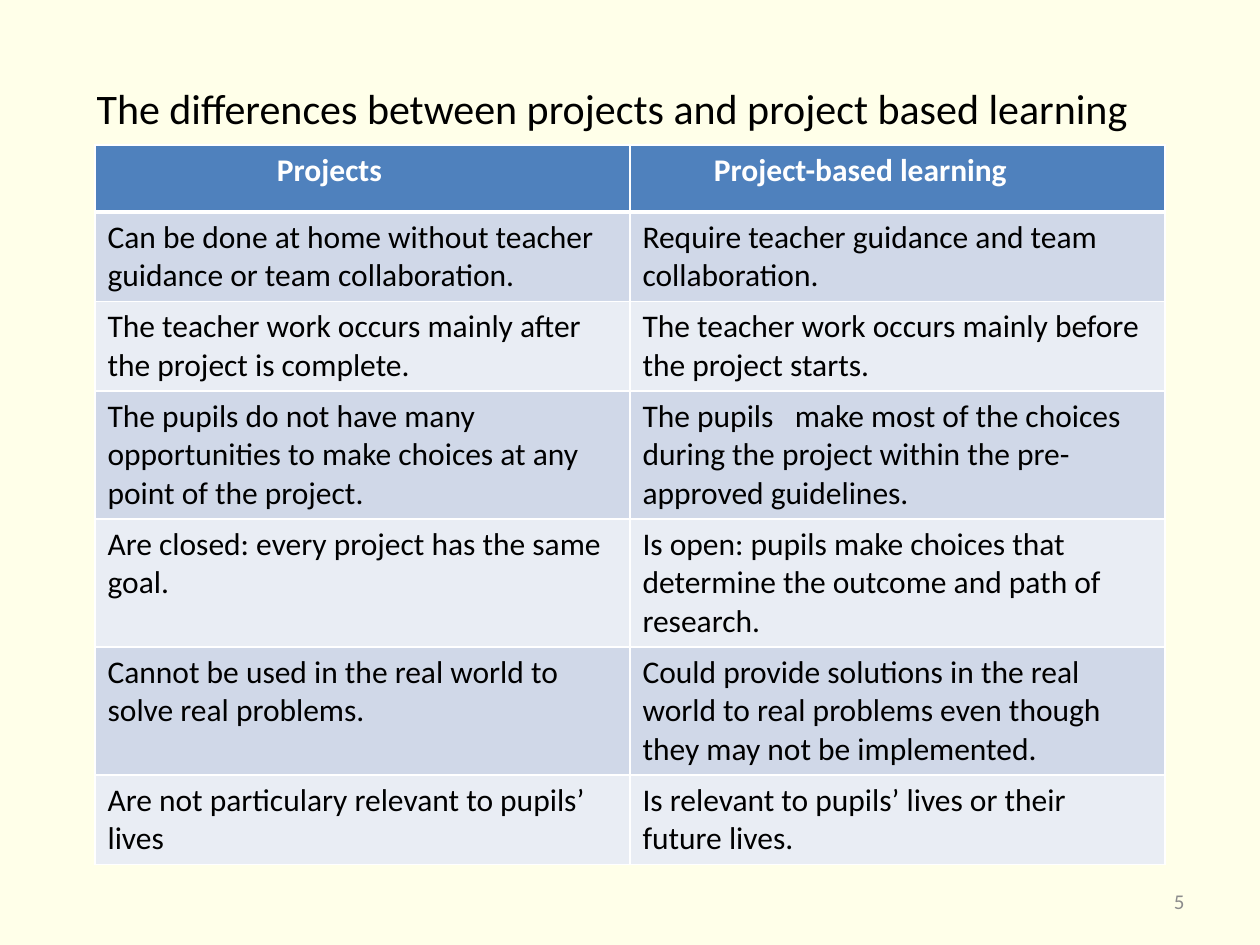
from lxml.etree import SubElement
from pptx import Presentation
from pptx.dml.color import RGBColor
from pptx.enum.text import MSO_ANCHOR, PP_ALIGN
from pptx.oxml.ns import qn
from pptx.util import Emu, Pt

EMU_PER_PX = 914400 / 126
FONT = "Calibri"
CREAM = RGBColor(0xFF, 0xFF, 0xE9)
BLACK = RGBColor(0x00, 0x00, 0x00)
WHITE = RGBColor(0xFF, 0xFF, 0xFF)
GRAY = RGBColor(0x8C, 0x8C, 0x8C)
BLUE = RGBColor(0x4F, 0x81, 0xBD)
BANDS = (RGBColor(0xE9, 0xED, 0xF4), RGBColor(0xD0, 0xD8, 0xE8))

TITLE = "The differences between projects and project based learning"
ROWS = [
    ("Projects", "Project-based learning"),
    ("Can be done at home without teacher guidance or team collaboration.",
     "Require teacher guidance and team collaboration."),
    ("The teacher work occurs mainly after the project is complete.",
     "The teacher work occurs mainly before the project starts."),
    ("The pupils do not have many opportunities to make choices at any point of the project.",
     "The pupils   make most of the choices during the project within the pre-approved guidelines."),
    ("Are closed: every project has the same goal.",
     "Is open: pupils make choices that determine the outcome and path of research."),
    ("Cannot be used in the real world to solve real problems.",
     "Could provide solutions in the real world to real problems even though they may not be implemented."),
    ("Are not particulary relevant to pupils’ lives",
     "Is relevant to pupils’ lives or their future lives."),
]
ROW_HEIGHTS = (67, 88, 88, 126, 126, 126, 88)
HEADER_INDENTS = (182, 84)


def px(n):
    return Emu(round(n * EMU_PER_PX))


def write(tf, text, size, color, bold=False, align=PP_ALIGN.LEFT):
    tf.word_wrap = True
    p = tf.paragraphs[0]
    p.text = text
    p.alignment = align
    p.font.name = FONT
    p.font.size = Pt(size)
    p.font.bold = bold
    p.font.color.rgb = color


def set_borders(cell, **widths):
    tc_pr = cell._tc.get_or_add_tcPr()
    for side in "LRTB":
        ln = SubElement(tc_pr, qn(f"a:ln{side}"), w=str(Pt(widths.get(side, 1))))
        fill = SubElement(ln, qn("a:solidFill"))
        SubElement(fill, qn("a:srgbClr"), val=str(WHITE))


def add_title(s, x, y, w, h):
    sp = s.shapes.title
    sp.left, sp.top, sp.width, sp.height = px(x), px(y), px(w), px(h)
    sp.text_frame.vertical_anchor = MSO_ANCHOR.TOP
    write(sp.text_frame, TITLE, 24, BLACK)


def add_comparison(s, x, y, w):
    frame = s.shapes.add_table(len(ROWS), 2, px(x), px(y), px(w), px(sum(ROW_HEIGHTS)))
    table = frame.table
    for column in table.columns:
        column.width = px(w / 2)
    for i, (texts, height) in enumerate(zip(ROWS, ROW_HEIGHTS)):
        table.rows[i].height = px(height)
        for j, text in enumerate(texts):
            cell = table.cell(i, j)
            header = i == 0
            set_borders(cell, T=3 if i == 1 else 1, B=3 if header else 1)
            cell.fill.solid()
            cell.fill.fore_color.rgb = BLUE if header else BANDS[i % 2]
            if header:
                cell.margin_left = px(HEADER_INDENTS[j])
            write(cell.text_frame, text, 18, WHITE if header else BLACK, header)


def add_page_number(s, x, y, w, h):
    tf = s.shapes.add_textbox(px(x), px(y), px(w), px(h)).text_frame
    tf.vertical_anchor = MSO_ANCHOR.MIDDLE
    write(tf, "5", 12, GRAY, align=PP_ALIGN.RIGHT)


def main():
    prs = Presentation()
    prs.slide_width, prs.slide_height = px(1260), px(945)
    s = prs.slides.add_slide(prs.slide_layouts[5])
    s.background.fill.solid()
    s.background.fill.fore_color.rgb = CREAM
    add_title(s, 84, 76, 1091, 63)
    add_comparison(s, 95, 145, 1070)
    add_page_number(s, 903, 876, 294, 50)
    prs.save("out.pptx")


if __name__ == "__main__":
    main()
